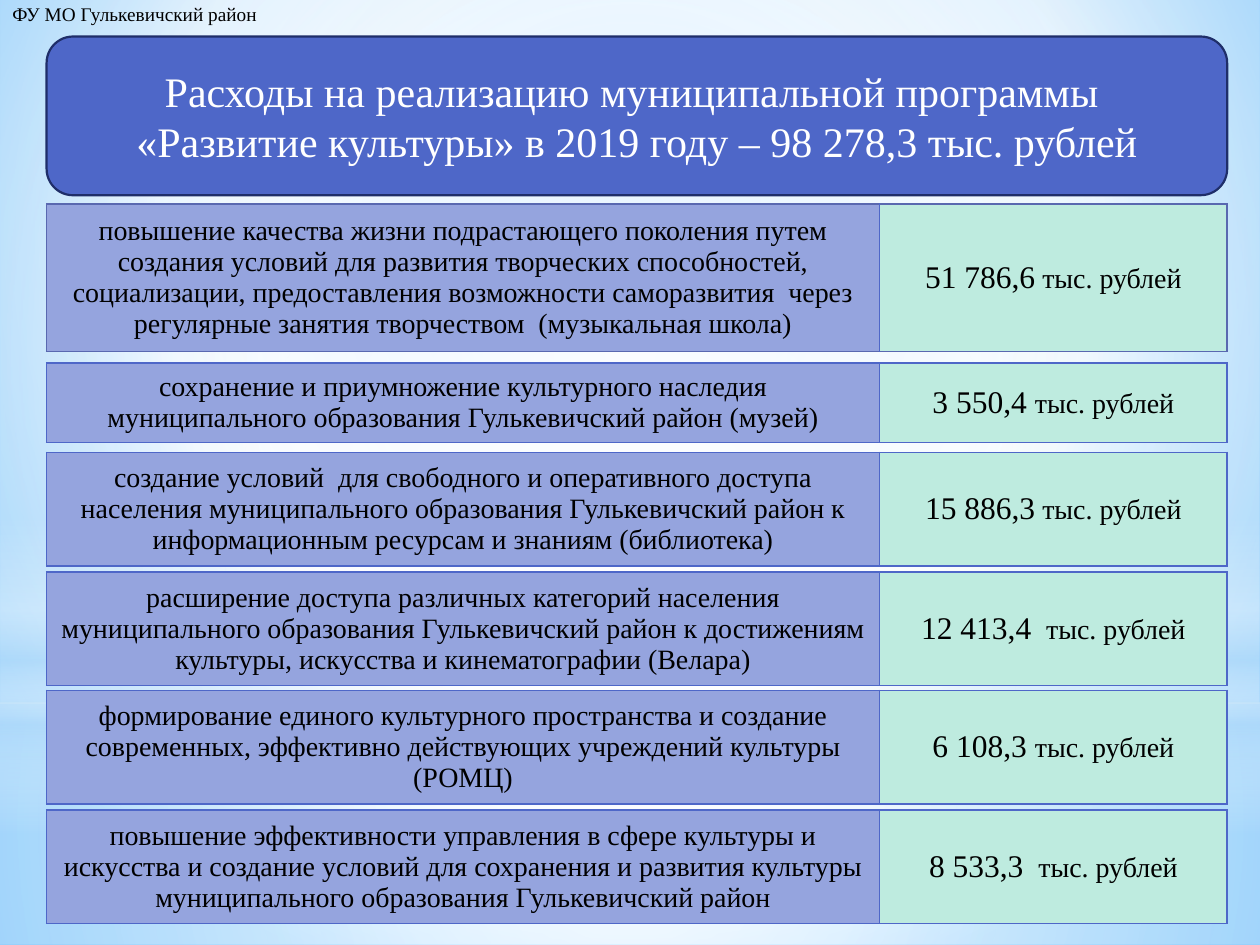
import pptx
import pptx.util
import pptx.oxml
import pptx.oxml.ns
import pptx.dml.color
import pptx.enum.shapes
import pptx.enum.text

Inches = pptx.util.Inches
Pt = pptx.util.Pt
Kind = pptx.enum.shapes.MSO_SHAPE
Align = pptx.enum.text.PP_ALIGN
Anchor = pptx.enum.text.MSO_ANCHOR


def tone(code):
    return pptx.dml.color.RGBColor.from_string(code)


def write(para, text, size=16, color="000000", align=Align.CENTER):
    para.alignment = align
    run = para.add_run()
    run.text = text
    run.font.name = "Times New Roman"
    run.font.size = Pt(size)
    run.font.bold = False
    run.font.color.rgb = tone(color)


deck = pptx.Presentation()
deck.slide_width = Inches(10)
deck.slide_height = Inches(7.5)
slide = deck.slides.add_slide(deck.slide_layouts[6])
shapes = slide.shapes
space = pptx.oxml.ns.nsdecls("a")

center = (50, 50, 50, 50)
layers = [
    (None, None, [(0, "9ED5FF", 100), (60, "FFFFFF", 100), (100, "5BB9FF", 100)], (20, 10, 20, 60)),
    (Kind.RECTANGLE, (0, 5.58, 10, 1.92),
     [(0, "FFFFFF", 91), (37, "FFFFFF", 76), (100, "B4DCFA", 79)], center),
    (Kind.RECTANGLE, (0, 0, 10, 5.58),
     [(0, "FFFFFF", 89), (48, "FFFFFF", 62), (100, "B4DCFA", 79)], center),
    (Kind.RECTANGLE, (0, 4.12, 10, 2.5),
     [(0, "FFFFFF", 0), (29, "FFFFFF", 30), (45, "B4DCFA", 40),
      (55, "FFFFFF", 26), (65, "B4DCFA", 60), (100, "FFFFFF", 0)], None),
    (Kind.OVAL, (0, 1.75, 10, 5.58), [(0, "FFFFFF", 100), (56, "FFFFFF", 0)], center),
]
for kind, box, stops, focus in layers:
    if kind is None:
        fill = slide.background.fill
    else:
        shape = shapes.add_shape(kind, *map(Inches, box))
        shape.shadow.inherit = False
        shape.line.fill.background()
        fill = shape.fill
    fill.gradient()
    grad = slide.element.xpath(".//a:gradFill")[-1]
    for child in list(grad):
        grad.remove(child)
    marks = "".join(
        f'<a:gs pos="{pos * 1000}"><a:srgbClr val="{tone(code)}">'
        f'<a:alpha val="{alpha * 1000}"/></a:srgbClr></a:gs>'
        for pos, code, alpha in stops)
    grad.append(pptx.oxml.parse_xml(f"<a:gsLst {space}>{marks}</a:gsLst>"))
    if focus:
        sides = " ".join(f'{side}="{size * 1000}"' for side, size in zip("ltrb", focus))
        form = f'<a:path {space} path="circle"><a:fillToRect {sides}/></a:path>'
    else:
        form = f'<a:lin {space} ang="5400000" scaled="0"/>'
    grad.append(pptx.oxml.parse_xml(form))

label = shapes.add_textbox(Inches(0), Inches(-0.03), Inches(2.18), Inches(0.29))
label.text_frame.word_wrap = False
write(label.text_frame.paragraphs[0], "ФУ МО Гулькевичский район", size=11, align=Align.LEFT)

title = shapes.add_shape(Kind.ROUNDED_RECTANGLE, Inches(0.37), Inches(0.29), Inches(9.37), Inches(1.26))
title.shadow.inherit = False
title.fill.solid()
title.fill.fore_color.rgb = tone("4E67C8")
title.line.color.rgb = tone("1F2E69")
title.line.width = Pt(1.25)
frame = title.text_frame
frame.word_wrap = True
frame.vertical_anchor = Anchor.MIDDLE
write(frame.paragraphs[0], "Расходы на реализацию муниципальной программы ", size=24, color="FFFFFF")
write(frame.add_paragraph(), "«Развитие культуры» в 2019 году – 98 278,3 тыс. рублей", size=24, color="FFFFFF")

goals = [
    (1.62, 1.17, "5968B0", "повышение качества жизни подрастающего поколения путем создания условий для развития "
     "творческих способностей, социализации, предоставления возможности саморазвития  через регулярные "
     "занятия творчеством  (музыкальная школа)", "51 786,6", " тыс. рублей"),
    (2.88, 0.63, "4E67C8", "сохранение и приумножение культурного наследия муниципального образования "
     "Гулькевичский район (музей)", "3 550,4 ", "тыс. рублей"),
    (3.59, 0.9, "4E67C8", "создание условий  для свободного и оперативного доступа населения муниципального "
     "образования Гулькевичский район к информационным ресурсам и знаниям (библиотека)",
     "15 886,3", " тыс. рублей"),
    (4.54, 0.9, "4E67C8", "расширение доступа различных категорий населения муниципального образования "
     "Гулькевичский район к достижениям культуры, искусства и кинематографии (Велара)",
     "12 413,4 ", " тыс. рублей"),
    (5.48, 0.9, "4E67C8", "формирование единого культурного пространства и создание современных, эффективно "
     "действующих учреждений культуры (РОМЦ)", "6 108,3 ", "тыс. рублей"),
    (6.43, 0.9, "4E67C8", "повышение эффективности управления в сфере культуры и искусства и создание условий "
     "для сохранения и развития культуры муниципального образования Гулькевичский район",
     "8 533,3 ", " тыс. рублей"),
]
for top, height, edge, goal, sum, unit in goals:
    holder = shapes.add_table(1, 2, Inches(0.37), Inches(top), Inches(9.37), Inches(height))
    table = holder.table
    table.first_row = False
    table.horz_banding = False
    parts = [[(goal, 16)], [(sum, 18), (unit, 16)]]
    for col, (width, color) in enumerate([(6.61, "95A4DE"), (2.76, "BEEBDF")]):
        table.columns[col].width = Inches(width)
        cell = table.cell(0, col)
        cell.vertical_anchor = Anchor.MIDDLE
        cell.fill.solid()
        cell.fill.fore_color.rgb = tone(color)
        for text, size in parts[col]:
            write(cell.text_frame.paragraphs[0], text, size=size)
        props = holder.element.xpath(".//a:tcPr")[col]
        for spot, side in enumerate("LRTB"):
            inner = (col, side) in [(0, "R"), (1, "L")]
            code = tone("4E67C8" if inner else edge)
            props.insert(spot, pptx.oxml.parse_xml(
                f'<a:ln{side} {space} w="{Pt(1)}"><a:solidFill><a:srgbClr val="{code}"/>'
                f'</a:solidFill></a:ln{side}>'))

deck.save("out.pptx")
